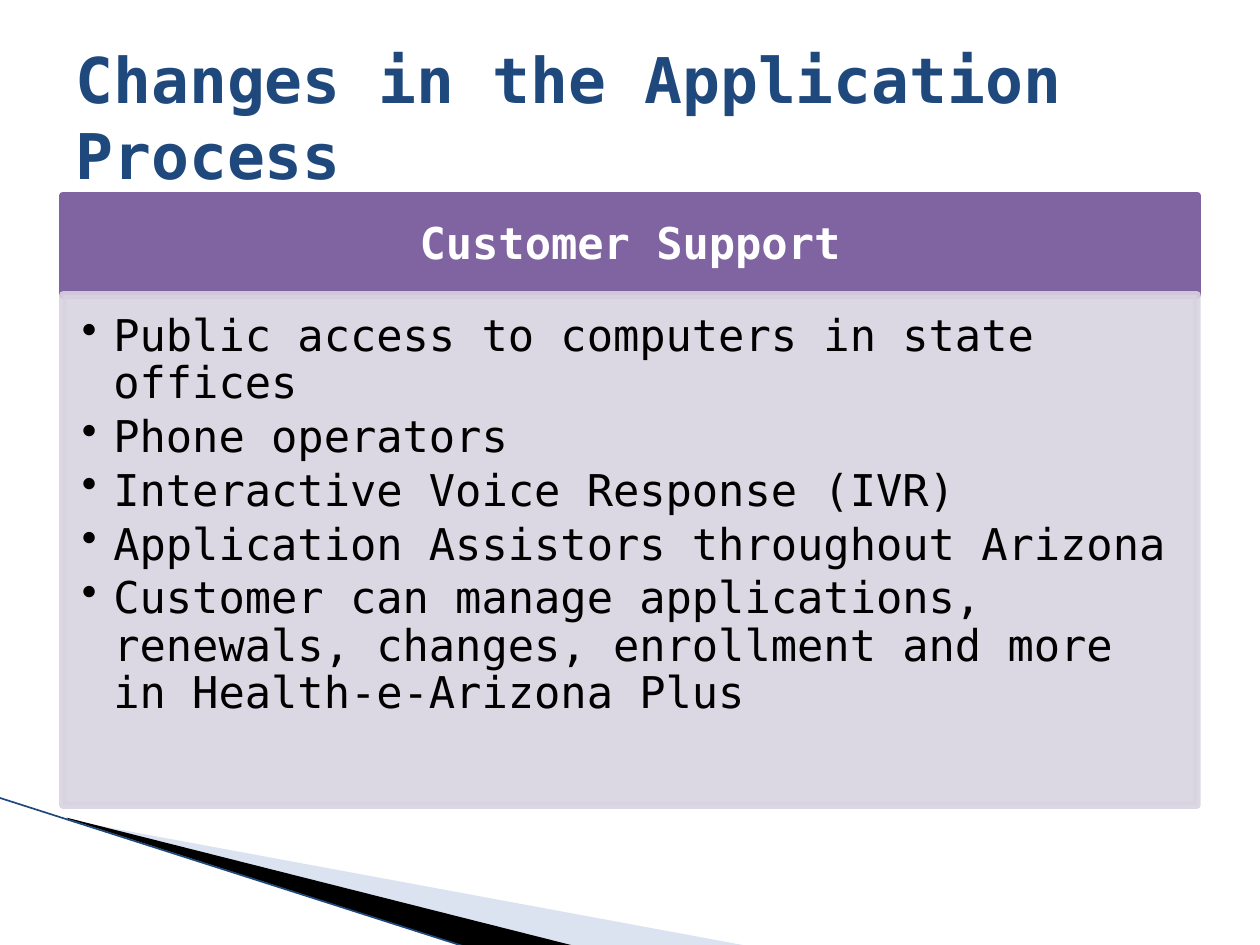
from dataclasses import dataclass

from lxml import etree
from pptx import Presentation
from pptx import util as u
from pptx.dml.color import RGBColor
from pptx.enum import shapes, text
from pptx.oxml import ns


@dataclass(frozen=True)
class Theme:
    font: str = "DejaVu Sans Mono"
    navy: str = "1F497D"
    purple: str = "8064A2"
    lilac: str = "D8D3E0"
    mist: str = "A7B9DB"
    black: str = "000000"
    white: str = "FFFFFF"
    title_size: int = 36
    body_size: int = 25
    panel_line: float = 4.33
    edge_line: float = 0.95


class SlideBuilder:
    def __init__(self, slide, theme):
        self.slide = slide
        self.theme = theme

    def paint(self, fill, color, alpha=100):
        fill.solid()
        fill.fore_color.rgb = RGBColor.from_string(color)
        if alpha < 100:
            for clr in fill._xPr.iter(ns.qn("a:srgbClr")):
                etree.SubElement(clr, ns.qn("a:alpha"), val=str(alpha * 1000))

    def wedge(self, points, color, alpha=100):
        start, *rest = [(u.Inches(x), u.Inches(y)) for x, y in points]
        outline = self.slide.shapes.build_freeform(*start)
        outline.add_line_segments(rest, close=True)
        wedge = outline.convert_to_shape()
        wedge.shadow.inherit = False
        self.paint(wedge.fill, color, alpha)
        wedge.line.fill.background()

    def edge(self, start, end, color):
        ends = [u.Inches(v) for v in (*start, *end)]
        edge = self.slide.shapes.add_connector(shapes.MSO_CONNECTOR.STRAIGHT, *ends)
        edge.line.width = u.Pt(self.theme.edge_line)
        self.paint(edge.line.fill, color)
        etree.SubElement(edge._element.spPr, ns.qn("a:effectLst"))

    def panel(self, box, color, alpha=100):
        panel = self.slide.shapes.add_shape(
            shapes.MSO_SHAPE.RECTANGLE, *[u.Inches(v) for v in box])
        panel.shadow.inherit = False
        panel.line.width = u.Pt(self.theme.panel_line)
        self.paint(panel.fill, color, alpha)
        self.paint(panel.line.fill, color, alpha)

    def words(self, box, lines, size, color, bold=False, align=text.PP_ALIGN.LEFT,
              anchor=text.MSO_ANCHOR.MIDDLE, insets=(0.1, 0.05, 0.1, 0.05),
              spacing=1.0, after=0, bullet=None):
        frame = self.slide.shapes.add_textbox(*[u.Inches(v) for v in box]).text_frame
        frame.word_wrap = True
        frame.vertical_anchor = anchor
        (frame.margin_left, frame.margin_top,
         frame.margin_right, frame.margin_bottom) = [u.Inches(v) for v in insets]
        for index, line in enumerate(lines):
            paragraph = frame.add_paragraph() if index else frame.paragraphs[0]
            if bullet:
                props = paragraph._p.get_or_add_pPr()
                props.set("marL", str(u.Inches(0.25)))
                props.set("indent", str(u.Inches(-0.25)))
                etree.SubElement(props, ns.qn("a:buChar"), char=bullet)
            paragraph.alignment = align
            paragraph.line_spacing = spacing
            paragraph.space_after = u.Pt(after)
            run = paragraph.add_run()
            run.text = line
            run.font.name = self.theme.font
            run.font.size = u.Pt(size)
            run.font.bold = bold
            run.font.color.rgb = RGBColor.from_string(color)


def main():
    deck = Presentation()
    deck.slide_width, deck.slide_height = u.Inches(10), u.Inches(7.5)
    theme = Theme()
    page = SlideBuilder(deck.slides.add_slide(deck.slide_layouts[6]), theme)

    page.wedge([(0.55, 6.51), (5.95, 7.51), (4.56, 7.51), (0.55, 6.5)], theme.mist, 40)
    page.wedge([(0.53, 6.49), (4.57, 7.51), (3.72, 7.52), (0.54, 6.5)], theme.black)
    page.edge((-0.01, 6.33), (3.71, 7.52), theme.navy)

    left, width = 0.5, 9
    title_top, heading_top, support_top = 0.3, 1.55, 2.34
    page.words((left, title_top, width, heading_top - title_top),
               ["Changes in the Application Process"],
               theme.title_size, theme.navy, bold=True)

    heading = (left, heading_top, width, support_top - heading_top)
    page.panel(heading, theme.purple)
    page.words(heading, ["Customer Support"], theme.body_size, theme.white, bold=True,
               align=text.PP_ALIGN.CENTER, insets=(0.19, 0.11, 0.19, 0.11), spacing=0.9)

    support = (left, support_top, width, 4.05)
    support_options = [
        "Public access to computers in state offices",
        "Phone operators",
        "Interactive Voice Response (IVR)",
        "Application Assistors throughout Arizona",
        "Customer can manage applications, renewals, changes, enrollment and more "
        "in Health-e-Arizona Plus",
    ]
    page.panel(support, theme.lilac, 90)
    page.words(support, support_options, theme.body_size, theme.black,
               anchor=text.MSO_ANCHOR.TOP, insets=(0.15, 0.15, 0.19, 0.22),
               spacing=0.9, after=3.75, bullet="•")

    deck.save("out.pptx")


if __name__ == "__main__":
    main()
